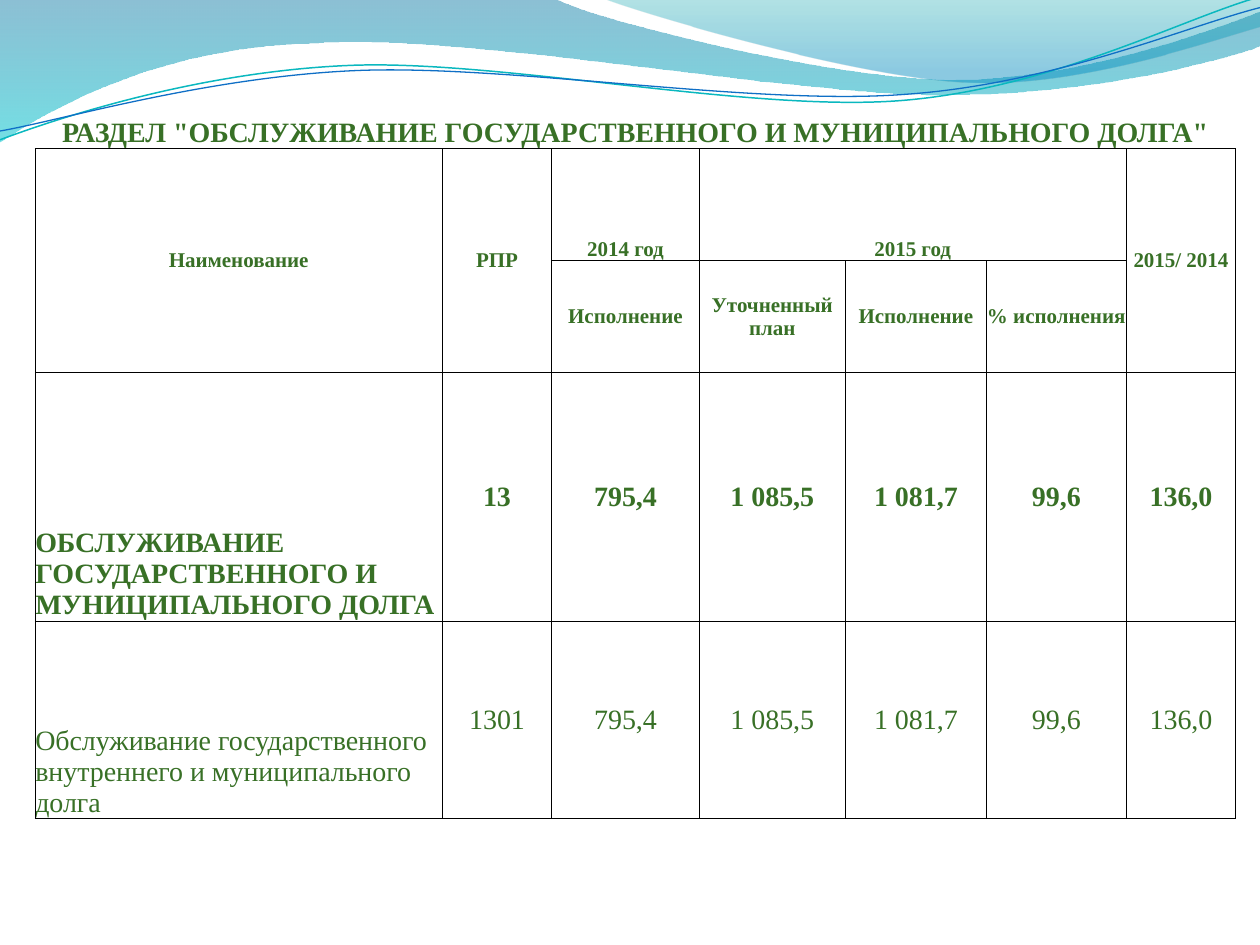
from dataclasses import dataclass
from math import cos, radians, sin

from lxml.etree import SubElement
from pptx import Presentation
from pptx.dml.color import RGBColor
from pptx.enum.text import MSO_ANCHOR as Anchor, PP_ALIGN as Align
from pptx.oxml.ns import qn
from pptx.util import Inches, Pt


@dataclass(frozen=True)
class Theme:
    font: str = "Times New Roman"
    text: str = "387026"
    border: str = "000000"
    border_pt: float = 0.5
    large: int = 16
    small: int = 12


@dataclass(frozen=True)
class Stop:
    position: float
    color: str
    alpha: int  # percent


@dataclass(frozen=True)
class Wave:
    """Frame, start point, then straight (2 numbers) or cubic (6) segments."""
    frame: tuple  # left, top, width, height before rotation
    start: tuple
    segments: tuple
    stops: tuple = ()
    line: str = ""
    width: float = 0
    rotation: float = 0


THEME = Theme()

WAVES = (
    Wave((-0.01, -0.01, 10.02, 1.14), (0, 0), (
        (4.4, -0.01), (4.76, 0.17, 6.64, 0.63, 7.58, 0.63),
        (8.53, 0.63, 9.58, 0.26, 10, 0.09), (10.01, 0.36),
        (9.83, 0.44, 8.7, 0.76, 7.46, 0.75), (6.22, 0.75, 3.82, 0.28, 2.57, 0.34),
        (1.29, 0.36, 0.46, 0.83, -0.01, 1.13), (0, 0)),
        stops=(Stop(0, "0074A1", 45), Stop(1, "00C6CF", 55))),
    Wave((4.79, -0.01, 5.21, 0.7), (4.79, -0.01), (
        (5.09, 0.11, 6.82, 0.62, 7.69, 0.65), (8.56, 0.69, 9.61, 0.32, 10, 0.21),
        (10, 0), (4.79, -0.01)),
        stops=(Stop(0, "00A1A9", 30), Stop(0.8, "008BBF", 45))),
    Wave((-0.02, 0.22, 10.02, 0.71), (0, 1.11), (
        (0.48, 0.93, 1.58, 0.57, 2.77, 0.52), (3.95, 0.47, 5.93, 0.89, 7.13, 0.8),
        (8.33, 0.71, 9.38, 0.15, 9.98, -0.02)),
        line="0AB8BF", width=0.85, rotation=357.3),
    Wave((-0.02, 0.3, 10.03, 0.58), (0, 1.04), (
        (0.47, 0.96, 1.64, 0.61, 2.83, 0.56), (4.03, 0.51, 5.97, 0.84, 7.17, 0.75),
        (8.36, 0.67, 9.41, 0.21, 10, 0.06)),
        line="0F6FC6", width=0.75, rotation=357.3),
)

COLUMNS = (3.23, 0.87, 1.17, 1.16, 1.12, 1.11, 0.87)
ROWS = (0.89, 0.89, 0.89, 1.97, 1.57)
FIGURES = ("795,4", "1 085,5", "1 081,7", "99,6", "136,0")
CELLS = (
    ('РАЗДЕЛ "ОБСЛУЖИВАНИЕ ГОСУДАРСТВЕННОГО И МУНИЦИПАЛЬНОГО ДОЛГА"',),
    ("Наименование", "РПР", "2014 год", "2015 год", "", "", "2015/ 2014"),
    ("", "", "Исполнение", "Уточненный план", "Исполнение", "% исполнения", ""),
    ("ОБСЛУЖИВАНИЕ ГОСУДАРСТВЕННОГО И МУНИЦИПАЛЬНОГО ДОЛГА", "13", *FIGURES),
    ("Обслуживание государственного внутреннего и муниципального долга", "1301",
     *FIGURES),
)
# First and last cell (row, column) of each merged area
MERGES = (((0, 0), (0, 6)), ((1, 0), (2, 0)), ((1, 1), (2, 1)),
          ((1, 3), (1, 5)), ((1, 6), (2, 6)))
BOTTOM_CELLS = {(0, 0), (1, 2), (1, 3), (3, 0), (4, 0)}


def local_point(wave: Wave, x: float, y: float) -> tuple:
    """Undo the rotation and measure from the corner of the frame."""
    left, top, width, height = wave.frame
    angle = radians(-wave.rotation)
    dx, dy = x - left - width / 2, y - top - height / 2
    return (Inches(dx * cos(angle) - dy * sin(angle) + width / 2),
            Inches(dx * sin(angle) + dy * cos(angle) + height / 2))


def add_command(outline, tag: str, wave: Wave, numbers: tuple) -> None:
    command = SubElement(outline, qn(tag))
    for x, y in zip(numbers[::2], numbers[1::2]):
        px, py = local_point(wave, x, y)
        SubElement(command, qn("a:pt"), x=str(px), y=str(py))


def draw_wave(s, wave: Wave) -> None:
    ends = [(Inches(seg[-2]), Inches(seg[-1])) for seg in wave.segments]
    builder = s.shapes.build_freeform(*map(Inches, wave.start))
    builder.add_line_segments(ends, close=False)
    sp = builder.convert_to_shape()
    sp.left, sp.top, sp.width, sp.height = map(Inches, wave.frame)
    sp.rotation = wave.rotation
    sp.shadow.inherit = False

    # Put true curves in place of the straight segments
    outline = next(sp._element.iter(qn("a:path")))
    outline.clear()
    outline.set("w", str(sp.width))
    outline.set("h", str(sp.height))
    add_command(outline, "a:moveTo", wave, wave.start)
    for seg in wave.segments:
        add_command(outline, "a:lnTo" if len(seg) == 2 else "a:cubicBezTo", wave, seg)

    if wave.line:
        sp.fill.background()
        sp.line.color.rgb = RGBColor.from_string(wave.line)
        sp.line.width = Pt(wave.width)
        return
    SubElement(outline, qn("a:close"))
    sp.line.fill.background()
    sp.fill.gradient()
    sp.fill.gradient_angle = 270  # top to bottom
    for target, stop in zip(sp.fill.gradient_stops, wave.stops):
        target.position = stop.position
        target.color.rgb = RGBColor.from_string(stop.color)
    for clr, stop in zip(sp._element.spPr.iter(qn("a:srgbClr")), wave.stops):
        SubElement(clr, qn("a:alpha"), val=str(stop.alpha * 1000))


def set_borders(cell, visible: str) -> None:
    """Draw the named sides (letters of LRTB) and clear the others."""
    tc_pr = cell._tc.get_or_add_tcPr()
    for side in "LRTB":
        ln = SubElement(tc_pr, qn(f"a:ln{side}"), w=str(Pt(THEME.border_pt)))
        if side in visible:
            fill = SubElement(ln, qn("a:solidFill"))
            SubElement(fill, qn("a:srgbClr"), val=THEME.border)
        else:
            SubElement(ln, qn("a:noFill"))


def write_cell(cell, text: str, *, size: int, bold: bool, align, anchor) -> None:
    cell.margin_left = cell.margin_right = cell.margin_top = cell.margin_bottom = 0
    cell.vertical_anchor = anchor
    p = cell.text_frame.paragraphs[0]
    p.alignment = align
    r = p.add_run()
    r.text = text
    r.font.name = THEME.font
    r.font.size = Pt(size)
    r.font.bold = bold
    r.font.color.rgb = RGBColor.from_string(THEME.text)


def draw_table(s) -> None:
    table = s.shapes.add_table(
        len(ROWS), len(COLUMNS), Inches(0.28), Inches(0.29),
        Inches(sum(COLUMNS)), Inches(sum(ROWS))).table
    table.first_row = table.horz_banding = False
    for col, width in zip(table.columns, COLUMNS):
        col.width = Inches(width)
    for row, height in zip(table.rows, ROWS):
        row.height = Inches(height)
    for first, last in MERGES:
        table.cell(*first).merge(table.cell(*last))

    for i in range(len(ROWS)):
        for j in range(len(COLUMNS)):
            cell = table.cell(i, j)
            set_borders(cell, "LRTB" if i else "B")
            cell.fill.background()
    for i, texts in enumerate(CELLS):
        for j, text in enumerate(texts):
            if text:
                write_cell(
                    table.cell(i, j), text,
                    size=THEME.small if i in (1, 2) else THEME.large, bold=i < 4,
                    align=Align.LEFT if j == 0 and i > 2 else Align.CENTER,
                    anchor=Anchor.BOTTOM if (i, j) in BOTTOM_CELLS else Anchor.MIDDLE)


def main() -> None:
    prs = Presentation()
    prs.slide_width, prs.slide_height = Inches(10), Inches(7.5)
    s = prs.slides.add_slide(prs.slide_layouts[6])
    # Decorative waves along the top
    for wave in WAVES:
        draw_wave(s, wave)
    # Budget table with its title row
    draw_table(s)
    prs.save("out.pptx")


if __name__ == "__main__":
    main()
